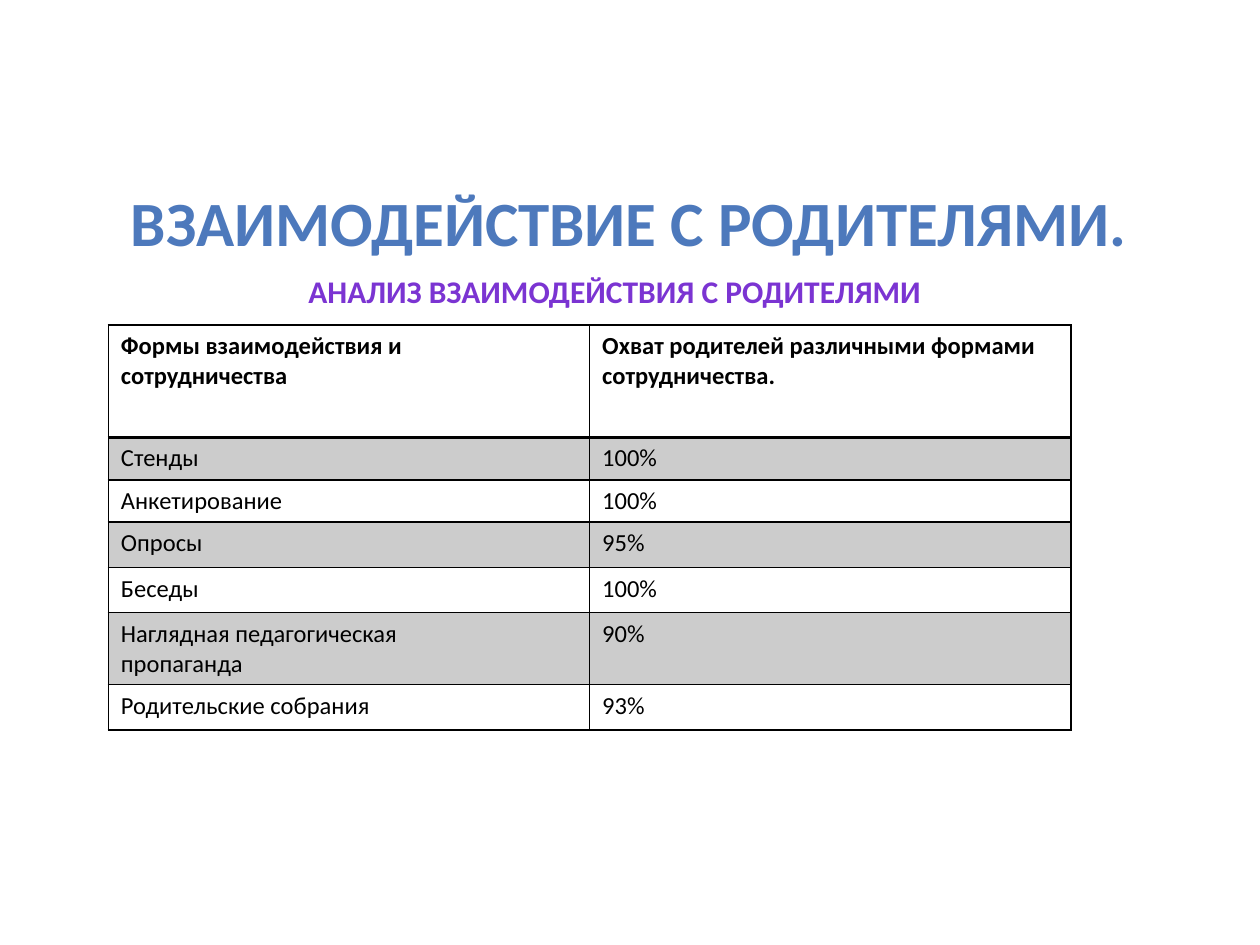
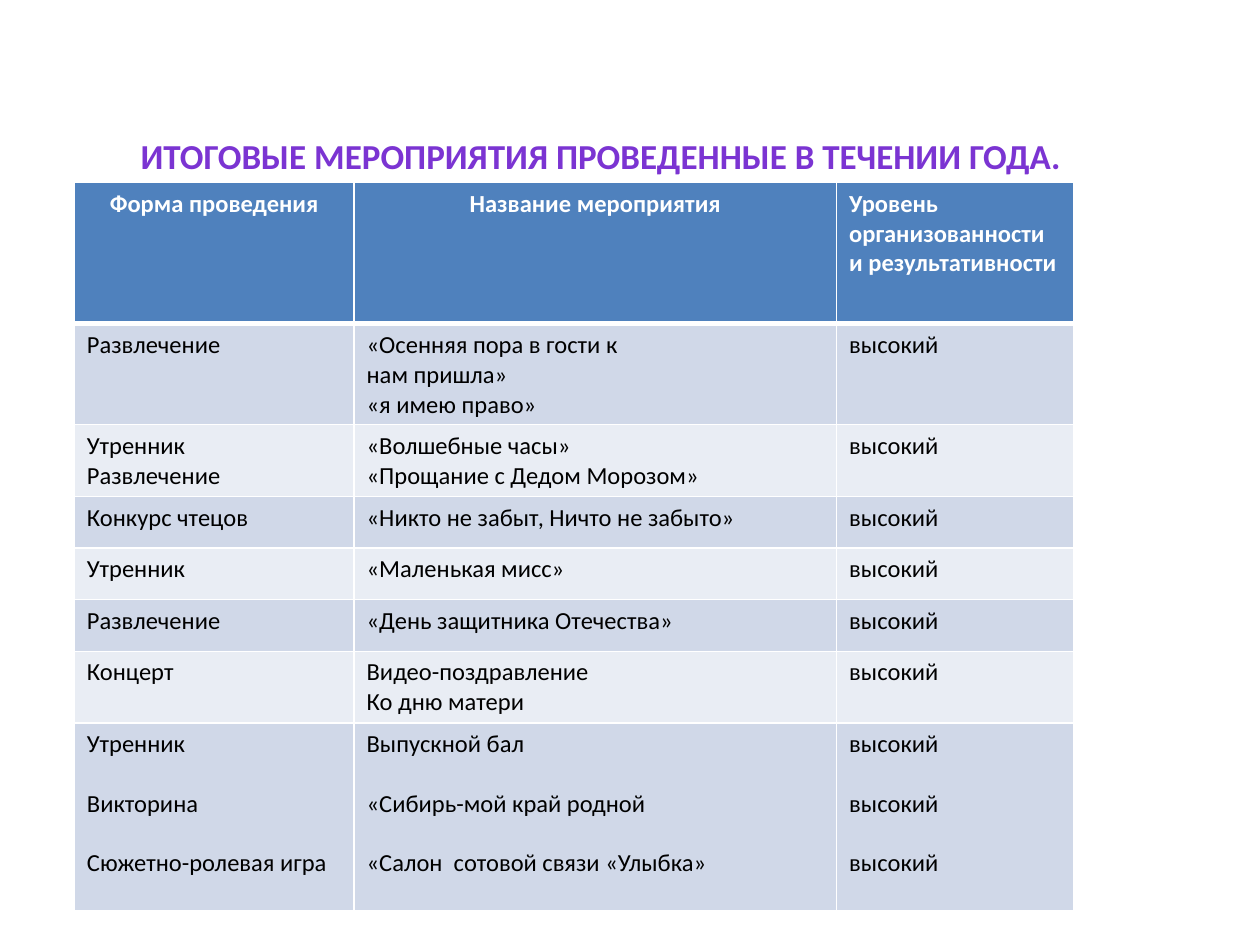
import dataclasses
import typing

import lxml.etree
import pptx
import pptx.dml.color
import pptx.enum.text
import pptx.oxml.ns
import pptx.util

Inches = pptx.util.Inches
Pt = pptx.util.Pt
ALIGN = pptx.enum.text.PP_ALIGN
qn = pptx.oxml.ns.qn

FONT = "Calibri"
BLACK = "000000"
WHITE = "FFFFFF"
BLUE = "4D79BC"
VIOLET = "7B34D2"


@dataclasses.dataclass
class Title:
    text: str
    box: tuple[float, float, float, float]
    size: int
    color: str = VIOLET
    align: ALIGN = ALIGN.CENTER


@dataclasses.dataclass
class Row:
    height: float
    cells: tuple[str, ...]  # a line break starts a new paragraph
    gap: int = 0  # points between paragraphs


@dataclasses.dataclass
class Look:
    head_fill: typing.Optional[str]
    bands: tuple[typing.Optional[str], ...]
    head_text: str
    border: str
    head_line: int  # points under the header row
    aligns: tuple[ALIGN, ...]  # header cells


@dataclasses.dataclass
class Grid:
    left: float
    top: float
    widths: tuple[float, ...]
    rows: tuple[Row, ...]
    look: Look


def rgb(color: str) -> pptx.dml.color.RGBColor:
    return pptx.dml.color.RGBColor.from_string(color)


def style(para, size: int, color: str, bold: bool, align: ALIGN) -> None:
    para.alignment = align
    font = para.font
    font.name, font.size, font.bold = FONT, Pt(size), bold
    font.color.rgb = rgb(color)


def add_title(slide, title: Title) -> None:
    frame = slide.shapes.add_textbox(*map(Inches, title.box)).text_frame
    frame.word_wrap = True
    frame.auto_size = pptx.enum.text.MSO_AUTO_SIZE.SHAPE_TO_FIT_TEXT
    frame.text = title.text
    style(frame.paragraphs[0], title.size, title.color, True, title.align)


def add_edge(cell, side: str, color: str, width: int) -> None:
    props = cell._tc.get_or_add_tcPr()
    line = lxml.etree.SubElement(props, qn(f"a:ln{side}"), w=str(Pt(width)))
    fill = lxml.etree.SubElement(line, qn("a:solidFill"))
    lxml.etree.SubElement(fill, qn("a:srgbClr"), val=color)


def paint(cell, color: typing.Optional[str]) -> None:
    if color is None:
        cell.fill.background()
    else:
        cell.fill.solid()
        cell.fill.fore_color.rgb = rgb(color)


def add_grid(slide, grid: Grid) -> None:
    look = grid.look
    height = sum(row.height for row in grid.rows)
    table = slide.shapes.add_table(
        len(grid.rows), len(grid.widths), Inches(grid.left), Inches(grid.top),
        Inches(sum(grid.widths)), Inches(height)).table
    for col, width in zip(table.columns, grid.widths):
        col.width = Inches(width)
    for r, row in enumerate(grid.rows):
        table.rows[r].height = Inches(row.height)
        head = r == 0
        fill = look.head_fill if head else look.bands[(r - 1) % len(look.bands)]
        for c, text in enumerate(row.cells):
            cell = table.cell(r, c)
            # The header rule is shared by the first two rows
            edges = {"L": 1, "R": 1, "T": look.head_line if r == 1 else 1,
                     "B": look.head_line if head else 1}
            for side, width in edges.items():
                add_edge(cell, side, look.border, width)
            paint(cell, fill)
            cell.text = text
            for n, para in enumerate(cell.text_frame.paragraphs):
                style(para, 14, look.head_text if head else BLACK, head,
                      look.aligns[c] if head else ALIGN.LEFT)
                if n and row.gap:
                    para.space_before = Pt(row.gap)


# Parents: forms of contact and their reach
PLAIN = Look(None, ("CCCCCC", None), BLACK, BLACK, 2, (ALIGN.LEFT,) * 2)
PARENTS = Grid(0.86, 2.58, (3.82, 3.82), (
    Row(0.89, ("Формы взаимодействия и\nсотрудничества",
               "Охват родителей различными формами сотрудничества.")),
    Row(0.34, ("Стенды", "100%")),
    Row(0.33, ("Анкетирование", "100%")),
    Row(0.36, ("Опросы", "95%")),
    Row(0.36, ("Беседы", "100%")),
    Row(0.57, ("Наглядная педагогическая\nпропаганда", "90%")),
    Row(0.36, ("Родительские собрания", "93%")),
), PLAIN)

# Events of the year
HIGH = "высокий"
BANDED = Look("4F81BD", ("D0D8E8", "E9EDF4"), WHITE, WHITE, 3,
              (ALIGN.CENTER, ALIGN.CENTER, ALIGN.JUSTIFY))
EVENTS = Grid(0.59, 1.45, (2.22, 3.83, 1.88), (
    Row(1.12, ("Форма проведения", "Название мероприятия",
               "Уровень организованности и результативности")),
    Row(0.8, ("Развлечение",
              "«Осенняя пора в гости к\nнам пришла»\n«я имею право»", HIGH)),
    Row(0.57, ("Утренник\nРазвлечение",
               "«Волшебные часы»\n«Прощание с Дедом Морозом»", HIGH)),
    Row(0.41, ("Конкурс чтецов", "«Никто не забыт, Ничто не забыто»", HIGH)),
    Row(0.41, ("Утренник", "«Маленькая мисс»", HIGH)),
    Row(0.41, ("Развлечение", "«День защитника Отечества»", HIGH)),
    Row(0.57, ("Концерт", "Видео-поздравление\nКо дню матери", HIGH)),
    Row(1.49, ("Утренник\nВикторина\nСюжетно-ролевая игра",
               "Выпускной бал\n«Сибирь-мой край родной\n"
               "«Салон  сотовой связи «Улыбка»",
               "\n".join([HIGH] * 3)), gap=17),
), BANDED)

SLIDES = (
    ((Title("ВЗАИМОДЕЙСТВИЕ С РОДИТЕЛЯМИ.", (0.94, 1.41, 8.52, 0.71), 36,
            BLUE, ALIGN.LEFT),
      Title("АНАЛИЗ ВЗАИМОДЕЙСТВИЯ С РОДИТЕЛЯМИ",
            (1.48, 2.11, 6.8, 0.4), 18)), PARENTS),
    ((Title("ИТОГОВЫЕ МЕРОПРИЯТИЯ ПРОВЕДЕННЫЕ В ТЕЧЕНИИ ГОДА.",
            (0.94, 1.02, 7.66, 0.44), 20),), EVENTS),
)


def main() -> None:
    deck = pptx.Presentation()
    deck.slide_width, deck.slide_height = Inches(10), Inches(7.5)
    for titles, grid in SLIDES:
        slide = deck.slides.add_slide(deck.slide_layouts[6])
        for title in titles:
            add_title(slide, title)
        add_grid(slide, grid)
    deck.save("out.pptx")


if __name__ == "__main__":
    main()
